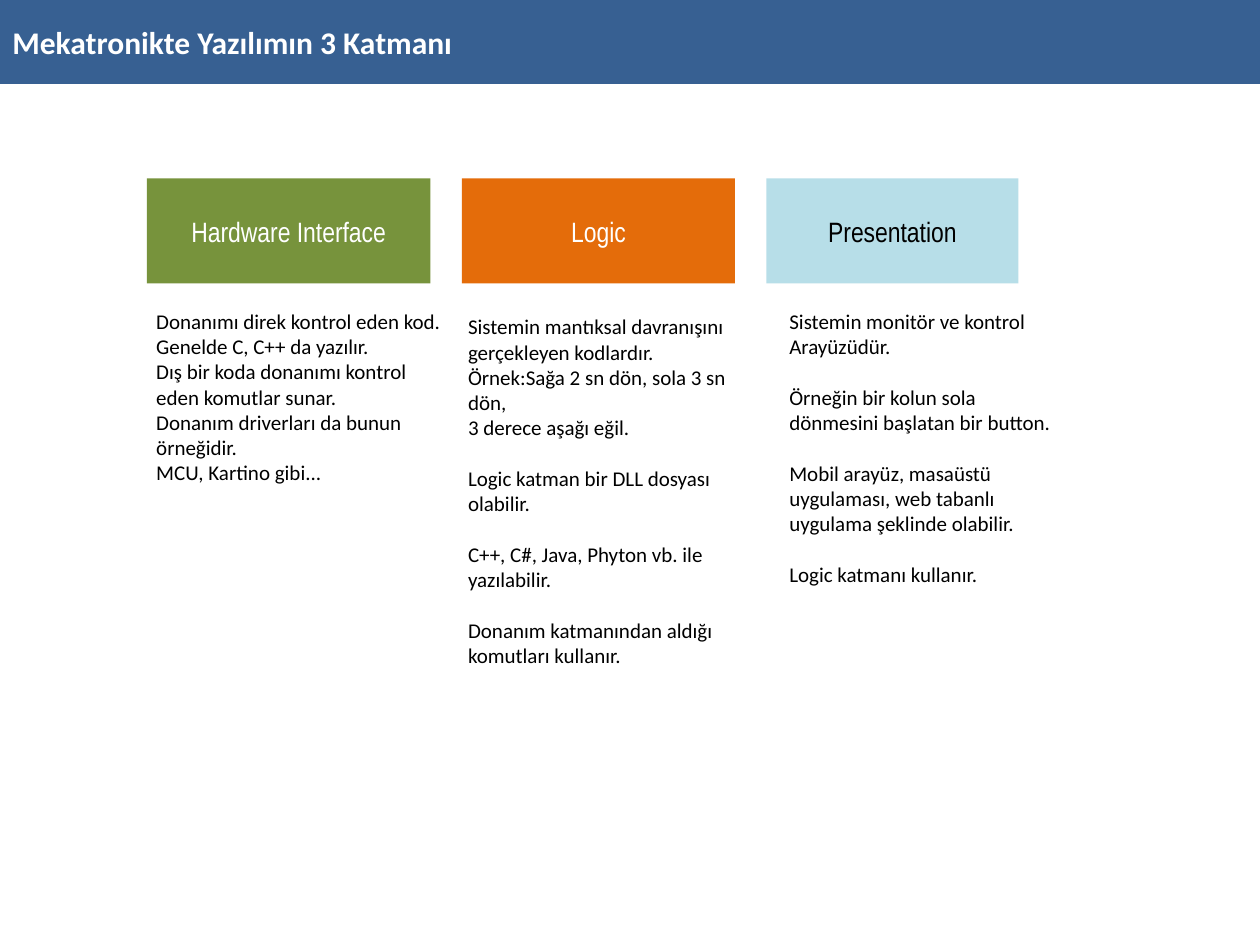
from dataclasses import dataclass

from pptx import Presentation
from pptx.dml.color import RGBColor
from pptx.enum.shapes import MSO_SHAPE
from pptx.enum.text import MSO_ANCHOR, MSO_AUTO_SIZE, PP_ALIGN
from pptx.slide import Slide
from pptx.util import Inches, Pt

NAVY = RGBColor(0x37, 0x60, 0x92)
GREEN = RGBColor(0x77, 0x93, 0x3C)
ORANGE = RGBColor(0xE4, 0x6C, 0x0A)
PALE_BLUE = RGBColor(0xB7, 0xDE, 0xE8)
WHITE = RGBColor(0xFF, 0xFF, 0xFF)
BLACK = RGBColor(0x00, 0x00, 0x00)

COLUMNS, ROWS = 120, 90
LAYER_LEFT, LAYER_TOP, LAYER_HEIGHT, LAYER_GAP = 14, 17, 10, 3

LAYERS = [
    dict(
        name="Hardware Interface", width=27, fill=GREEN, color=WHITE,
        notes_at=(13.7, 28.8, 29.8, 18.1), wrap=False,
        groups=[[
            "Donanımı direk kontrol eden kod.",
            "Genelde C, C++ da yazılır.",
            "Dış bir koda donanımı kontrol",
            "eden komutlar sunar.",
            "Donanım driverları da bunun",
            "örneğidir.",
            "MCU, Kartino gibi...",
        ]],
    ),
    dict(
        name="Logic", width=26, fill=ORANGE, color=WHITE,
        notes_at=(43.4, 29.3, 29, 35.2), wrap=True,
        groups=[
            [
                "Sistemin mantıksal davranışını",
                "gerçekleyen kodlardır.",
                "Örnek:Sağa 2 sn dön, sola 3 sn dön,",
                "3 derece aşağı eğil.",
            ],
            ["Logic katman bir DLL dosyası olabilir."],
            ["C++, C#, Java, Phyton vb. ile yazılabilir."],
            ["Donanım katmanından aldığı komutları kullanır."],
        ],
    ),
    dict(
        name="Presentation", width=24, fill=PALE_BLUE, color=BLACK,
        notes_at=(74, 28.8, 29, 27.8), wrap=True,
        groups=[
            ["Sistemin monitör ve kontrol", "Arayüzüdür."],
            ["Örneğin bir kolun sola dönmesini başlatan bir button."],
            ["Mobil arayüz, masaüstü uygulaması, web tabanlı uygulama şeklinde olabilir."],
            ["Logic katmanı kullanır."],
        ],
    ),
]


def write(frame, groups, font="Calibri", size=12, color=BLACK, bold=False,
          align=PP_ALIGN.LEFT, group_gap=14.6):
    lines = [(line, group_gap if index and not position else 0)
             for index, group in enumerate(groups)
             for position, line in enumerate(group)]
    for number, (line, gap) in enumerate(lines):
        paragraph = frame.add_paragraph() if number else frame.paragraphs[0]
        paragraph.alignment = align
        paragraph.space_before = Pt(gap)
        run = paragraph.add_run()
        run.text = line
        run.font.name = font
        run.font.size = Pt(size)
        run.font.bold = bold
        run.font.color.rgb = color


@dataclass
class LayerSlide:
    slide: Slide
    column: float
    row: float
    label_font: str = "Arial Narrow"
    label_size: int = 16

    def place(self, left, top, width, height):
        return [round(length) for length in (
            left * self.column, top * self.row,
            width * self.column, height * self.row)]

    def block(self, at, fill, label, **style):
        block = self.slide.shapes.add_shape(MSO_SHAPE.RECTANGLE, *self.place(*at))
        block.shadow.inherit = False
        block.fill.solid()
        block.fill.fore_color.rgb = fill
        block.line.fill.background()
        block.text_frame.vertical_anchor = MSO_ANCHOR.MIDDLE
        write(block.text_frame, [[label]], **style)

    def layer(self, at, fill, name, color):
        self.block(at, fill, name, color=color, font=self.label_font,
                   size=self.label_size, align=PP_ALIGN.CENTER)

    def notes(self, at, groups, wrap):
        frame = self.slide.shapes.add_textbox(*self.place(*at)).text_frame
        frame.word_wrap = wrap
        frame.auto_size = MSO_AUTO_SIZE.SHAPE_TO_FIT_TEXT
        write(frame, groups)

    def title(self, text):
        self.block((0, 0, COLUMNS, 8), NAVY, text, size=18, color=WHITE, bold=True)


def main():
    deck = Presentation()
    deck.slide_width, deck.slide_height = Inches(10), Inches(7.5)
    page = LayerSlide(deck.slides.add_slide(deck.slide_layouts[6]),
                      deck.slide_width / COLUMNS, deck.slide_height / ROWS)
    left = LAYER_LEFT
    for layer in LAYERS:
        page.layer((left, LAYER_TOP, layer["width"], LAYER_HEIGHT),
                   layer["fill"], layer["name"], layer["color"])
        left += layer["width"] + LAYER_GAP
    for layer in LAYERS:
        page.notes(layer["notes_at"], layer["groups"], layer["wrap"])
    page.title("Mekatronikte Yazılımın 3 Katmanı")
    deck.save("out.pptx")


if __name__ == "__main__":
    main()
